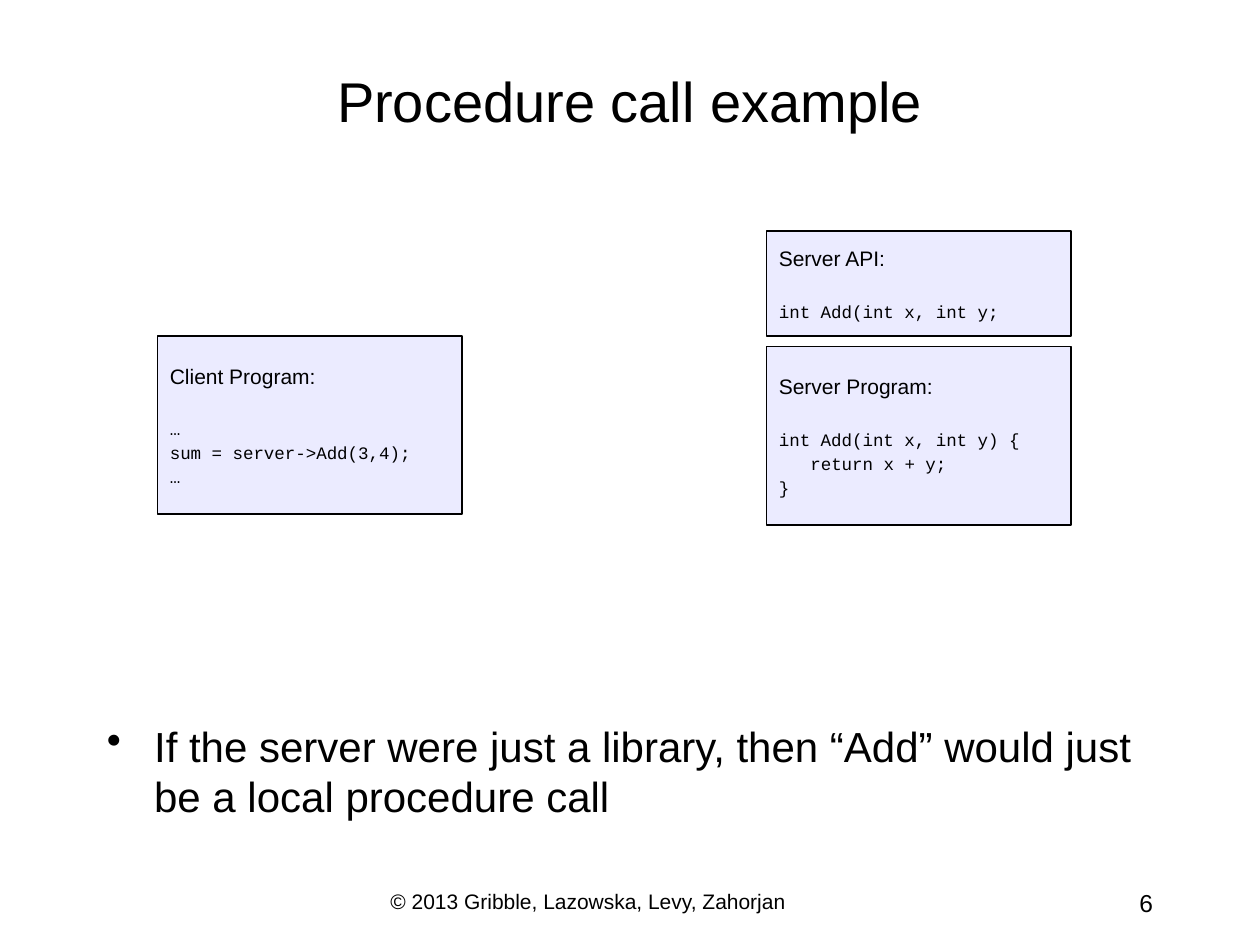
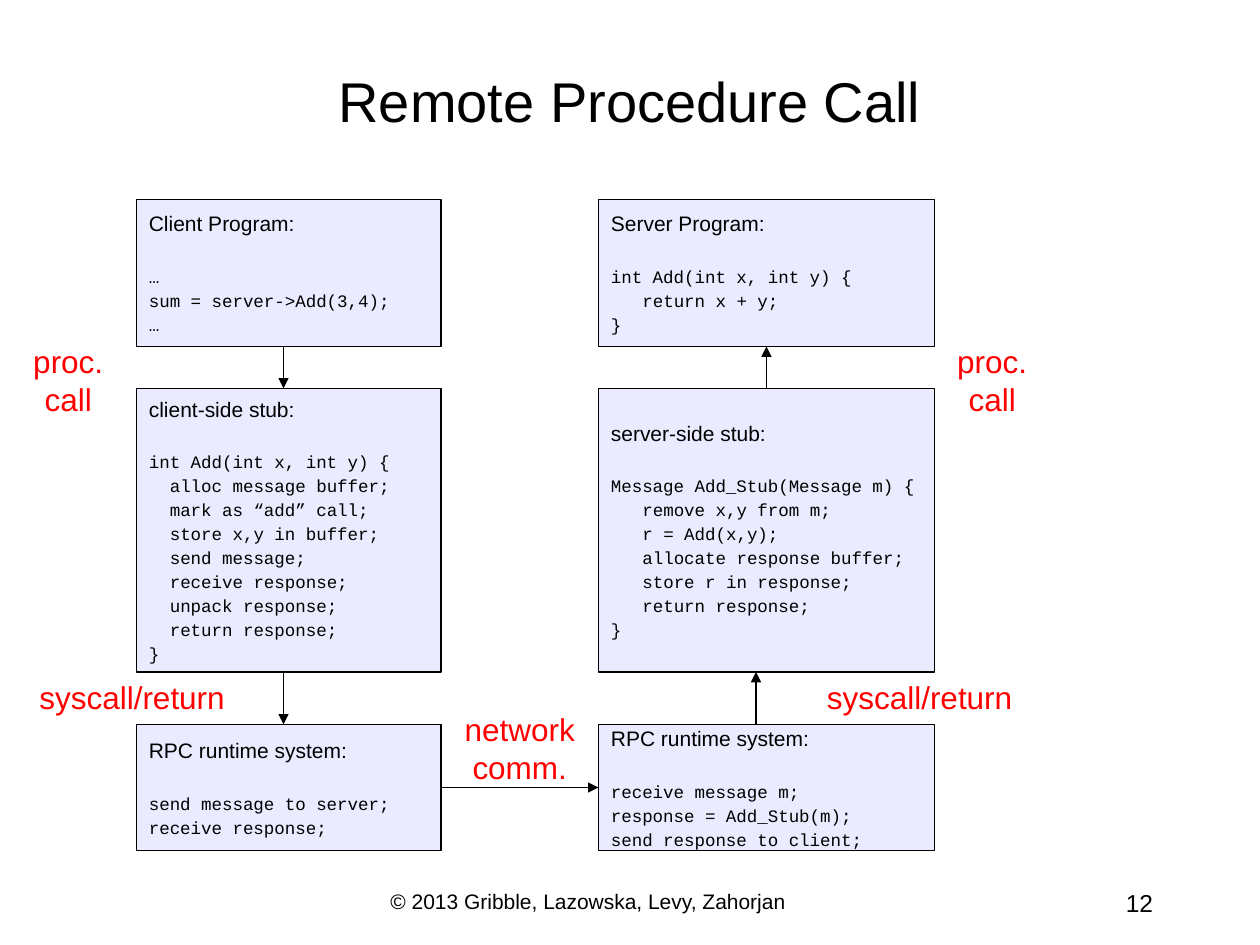
from lxml import etree
from pptx import Presentation
from pptx.dml.color import RGBColor
from pptx.enum.shapes import MSO_CONNECTOR, MSO_SHAPE
from pptx.enum.text import MSO_ANCHOR, PP_ALIGN
from pptx.oxml.ns import qn
from pptx.util import Pt

EMU_PER_PX = 9525
SLIDE_WIDTH, SLIDE_HEIGHT = 960, 720
LEFT, CENTER, RIGHT = PP_ALIGN.LEFT, PP_ALIGN.CENTER, PP_ALIGN.RIGHT
TOP, MIDDLE = MSO_ANCHOR.TOP, MSO_ANCHOR.MIDDLE
RECTANGLE, STRAIGHT = MSO_SHAPE.RECTANGLE, MSO_CONNECTOR.STRAIGHT
SIDE_TOP, SIDE_LEFT, SIDE_BOTTOM, SIDE_RIGHT = range(4)

COLORS = {"ink": "000000", "box": "EBEBFF", "label": "FF0000", "page": "FFFFFF"}
SANS, MONO = "Arial", "Courier New"
CODE_SPACE_PX = 8
LINE_GAP, HEADING_GAP = 1.7, 17.2

TITLE_BOX = (72, 40, 816, 72)
BODY_BOX = (72, 544, 816, 112)
COPYRIGHT_BOX = (288, 672, 384, 32)
NUMBER_BOX = (688, 672, 200, 32)

CLIENT_PROGRAM = ("Client Program:", ["…", "sum = server->Add(3,4);", "…"])
SERVER_PROGRAM = ("Server Program:", ["int Add(int x, int y) {", "   return x + y;", "}"])
CLIENT_STUB = ("client-side stub:", [
    "int Add(int x, int y) {",
    "  alloc message buffer;",
    "  mark as “add” call;",
    "  store x,y in buffer;",
    "  send message;",
    "  receive response;",
    "  unpack response;",
    "  return response;",
    "}",
])
SERVER_STUB = ("server-side stub:", [
    "Message Add_Stub(Message m) {",
    "   remove x,y from m;",
    "   r = Add(x,y);",
    "   allocate response buffer;",
    "   store r in response;",
    "   return response;",
    "}",
])
CLIENT_RUNTIME = ("RPC runtime system:", ["send message to server;", "receive response;"])
SERVER_RUNTIME = ("RPC runtime system:", [
    "receive message m;", "response = Add_Stub(m);", "send response to client;",
])


def px(*lengths):
    return [length * EMU_PER_PX for length in lengths]


def rgb(name):
    return RGBColor.from_string(COLORS[name])


def write(paragraph, text, size=12, font=SANS, color="ink", align=LEFT,
          space_before=0, indent=0, bullet=None):
    """Fill a paragraph; a bullet hangs to the left of the indent."""
    run = paragraph.add_run()
    run.text = text
    run.font.size, run.font.name = Pt(size), font
    run.font.color.rgb = rgb(color)
    paragraph.alignment = align
    paragraph.space_before = Pt(space_before)
    properties = paragraph._p.get_or_add_pPr()
    if indent:
        properties.set("marL", str(indent * EMU_PER_PX))
    if bullet:
        properties.set("indent", str(-indent * EMU_PER_PX))
        etree.SubElement(properties, qn("a:buChar")).set("char", bullet)


def add_text(slide, box, text, anchor=TOP, **text_format):
    frame = slide.shapes.add_textbox(*px(*box)).text_frame
    frame.word_wrap = True
    frame.vertical_anchor = anchor
    write(frame.paragraphs[0], text, **text_format)


def add_label(slide, box, text):
    add_text(slide, box, text, size=18, color="label", align=CENTER, space_before=LINE_GAP)


def add_code_box(slide, box, heading, code):
    shape = slide.shapes.add_shape(RECTANGLE, *px(*box))
    shape.shadow.inherit = False
    shape.fill.solid()
    shape.fill.fore_color.rgb = rgb("box")
    shape.line.color.rgb = rgb("ink")
    shape.line.width = Pt(1)
    frame = shape.text_frame
    frame.word_wrap = True
    frame.vertical_anchor = MIDDLE
    write(frame.paragraphs[0], heading, space_before=LINE_GAP)
    for index, line in enumerate(code):
        statement = line.lstrip()
        write(frame.add_paragraph(), statement, size=10, font=MONO,
              space_before=LINE_GAP if index else HEADING_GAP,
              indent=(len(line) - len(statement)) * CODE_SPACE_PX)
    return shape


def add_arrow(slide, start, end, joined=None):
    """Draw an arrow; joined is (first shape, its side, second shape, its side)."""
    connector = slide.shapes.add_connector(STRAIGHT, *px(*start, *end))
    if joined:
        first, first_side, second, second_side = joined
        connector.begin_connect(first, first_side)
        connector.end_connect(second, second_side)
    connector.line.color.rgb = rgb("ink")
    connector.line.width = Pt(1)
    etree.SubElement(connector.line._get_or_add_ln(), qn("a:tailEnd")).set("type", "triangle")
    etree.SubElement(connector._element.spPr, qn("a:effectLst"))


def add_base_slide(presentation, title, number):
    slide = presentation.slides.add_slide(presentation.slide_layouts[6])
    slide.background.fill.solid()
    slide.background.fill.fore_color.rgb = rgb("page")
    add_text(slide, COPYRIGHT_BOX, "© 2013 Gribble, Lazowska, Levy, Zahorjan")
    add_text(slide, NUMBER_BOX, str(number), size=14, align=RIGHT)
    add_text(slide, TITLE_BOX, title, anchor=MIDDLE, size=32, align=CENTER)
    return slide


def add_example_slide(presentation):
    slide = add_base_slide(presentation, "Procedure call example", 6)
    add_text(slide, BODY_BOX,
             "If the server were just a library, then “Add” would just be a local procedure call",
             size=24, space_before=4.8, indent=36, bullet="•")
    width, program_height = 232, 136
    add_code_box(slide, (120, 256, width, program_height), *CLIENT_PROGRAM)
    add_code_box(slide, (584, 264, width, program_height), *SERVER_PROGRAM)
    add_code_box(slide, (584, 176, width, 80), "Server API:", ["int Add(int x, int y;"])


def add_rpc_slide(presentation):
    slide = add_base_slide(presentation, "Remote Procedure Call", 12)
    rows = [(152, 112), (296, 216), (552, 96)]
    (program_top, program_height), (stub_top, stub_height), (runtime_top, runtime_height) = rows
    program_bottom, stub_bottom = program_top + program_height, stub_top + stub_height
    runtime_middle = runtime_top + runtime_height // 2
    client_left, client_width = 104, 232
    server_left, server_width = 456, 256
    server_right = server_left + server_width

    def add_column(left, width, contents):
        return [add_code_box(slide, (left, top, width, height), *content)
                for (top, height), content in zip(rows, contents)]

    client = add_column(client_left, client_width, [CLIENT_PROGRAM, CLIENT_STUB, CLIENT_RUNTIME])
    server = add_column(server_left, server_width, [SERVER_PROGRAM, SERVER_STUB, SERVER_RUNTIME])

    call_x, return_x, server_middle = 216, 576, server_left + server_width // 2
    add_arrow(slide, (call_x, program_bottom), (call_x, stub_top))
    add_arrow(slide, (call_x, stub_bottom), (call_x, runtime_top))
    add_arrow(slide, (client_left + client_width, runtime_middle), (server_left, runtime_middle),
              joined=(client[2], SIDE_RIGHT, server[2], SIDE_LEFT))
    add_arrow(slide, (return_x, runtime_top), (return_x, stub_bottom))
    add_arrow(slide, (server_middle, stub_top), (server_middle, program_bottom),
              joined=(server[1], SIDE_TOP, server[0], SIDE_BOTTOM))

    for left in (client_left - 96, server_right):
        add_label(slide, (left, program_bottom - 8, 88, 68), "proc. call")
    for left, width in ((16, 176), (608, 192)):
        add_label(slide, (left, stub_bottom, width, 38), "syscall/return ")
    add_label(slide, (320, runtime_top - 16, 152, 68), "network comm.")


def main():
    presentation = Presentation()
    presentation.slide_width, presentation.slide_height = px(SLIDE_WIDTH, SLIDE_HEIGHT)
    add_example_slide(presentation)
    add_rpc_slide(presentation)
    presentation.save("out.pptx")


if __name__ == "__main__":
    main()
